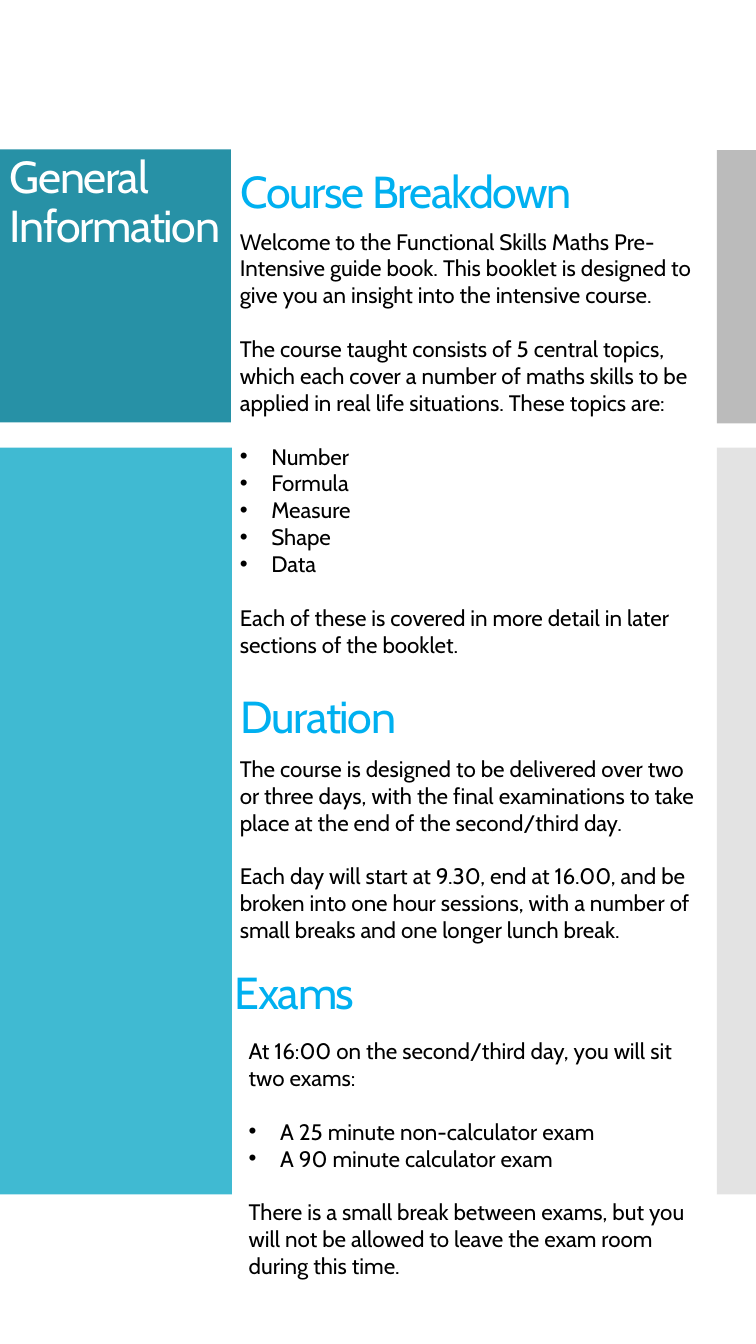
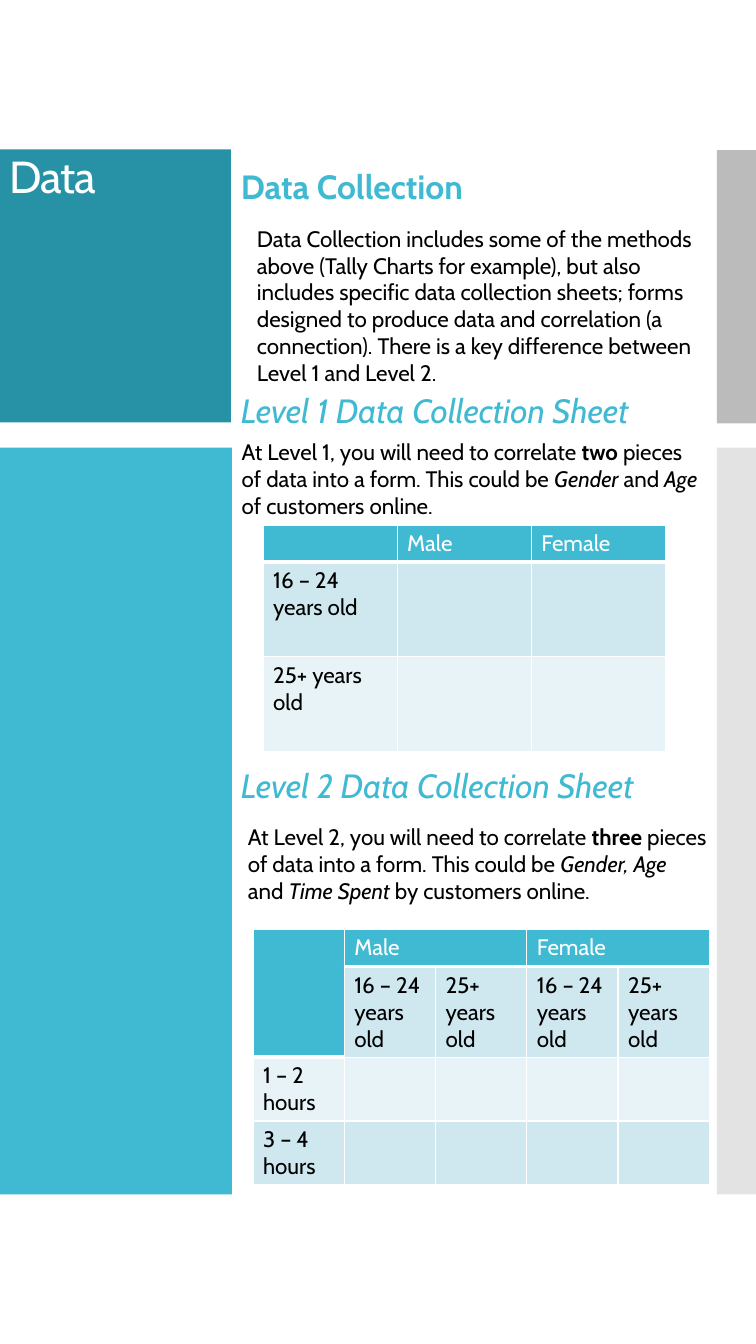
from dataclasses import dataclass

from lxml.etree import SubElement
from pptx import Presentation
from pptx.dml.color import RGBColor
from pptx.enum.shapes import MSO_SHAPE
from pptx.enum.text import MSO_ANCHOR, MSO_AUTO_SIZE
from pptx.oxml.ns import qn
from pptx.util import Pt


@dataclass(frozen=True)
class Style:
    size: int
    color: str
    bold: bool = False
    italic: bool = False
    tight: bool = False  # closer letters and lines
    grow: bool = False   # box height follows the text


class Theme:
    font = "Cabin"
    teal, dark_teal = "40BAD2", "2791A6"
    grey, pale_grey = "BBBBBB", "C8C8C8"
    row_tints = ("CFE7EE", "E8F3F7")
    white = "FFFFFF"
    title = Style(32, white, tight=True)
    heading = Style(32, "00B0F0", tight=True)
    topic = Style(24, teal, bold=True)
    subtopic = Style(24, teal, italic=True)
    body = Style(16, "000000", grow=True)
    table_head = Style(16, white)
    table_cell = Style(16, "000000")
    gap = 19.2     # one line of body text
    indent = 22.5  # bullet indent


def write(frame, paragraphs, style):
    """Each paragraph is (layout, runs); each run is (text, emphasis)."""
    for number, (layout, runs) in enumerate(paragraphs):
        para = frame.add_paragraph() if number else frame.paragraphs[0]
        if style.tight:
            para.line_spacing = 0.9
        if "gap" in layout:
            para.space_before = Pt(Theme.gap)
        if "bullet" in layout:
            properties = para._p.get_or_add_pPr()
            properties.set("marL", str(Pt(Theme.indent)))
            properties.set("indent", str(-Pt(Theme.indent)))
            SubElement(properties, qn("a:buFont"), typeface="Arial")
            SubElement(properties, qn("a:buChar"), char="•")
        for text, emphasis in runs:
            span = para.add_run()
            span.text = text
            span.font.name = Theme.font
            span.font.size = Pt(style.size)
            span.font.color.rgb = RGBColor.from_string(style.color)
            span.font.bold = style.bold or emphasis == "bold"
            span.font.italic = style.italic or emphasis == "italic"
            if style.tight:
                span.font._element.set("spc", "-100")
        if not runs:
            SubElement(para._p, qn("a:endParaRPr"), sz=str(style.size * 100))


def add_text(page, place, paragraphs, style):
    box = page.shapes.add_textbox(*map(Pt, place))
    frame = box.text_frame
    frame.word_wrap = True
    frame.vertical_anchor = MSO_ANCHOR.TOP
    write(frame, paragraphs, style)
    if style.grow:
        frame.auto_size = MSO_AUTO_SIZE.SHAPE_TO_FIT_TEXT


deck = Presentation()
deck.slide_width, deck.slide_height = Pt(540), Pt(960)

# Shared bands: left, top, width, height, colour, opacity in percent
bands = [
    (0, 106.6, 165, 195.1, Theme.dark_teal, 100),
    (512, 107.3, 28, 195.1, Theme.grey, 100),
    (0, 319.7, 165.6, 533.5, Theme.teal, 100),
    (512, 319.7, 28, 533.5, Theme.pale_grey, 50),
]

# Text blocks of each page: place, paragraphs, style
general_blocks = [
    ((164.9, 118.1, 300.2, 46.1), [("", [("Course Breakdown", "")])], Theme.heading),
    ((164.2, 159.1, 347, 317.5), [
        ("", [("Welcome to the Functional Skills Maths Pre-Intensive guide book. "
               "This booklet is designed to give you an insight into the "
               "intensive course.", "")]),
        ("gap", [("The course taught consists of 5 central topics, which each cover "
                  "a number of maths skills to be applied in real life situations. "
                  "These topics are:", "")]),
        ("gap bullet", [("Number", "")]),
        ("bullet", [("Formula", "")]),
        ("bullet", [("Measure", "")]),
        ("bullet", [("Shape", "")]),
        ("bullet", [("Data", "")]),
        ("gap", [("Each of these is covered in more detail in later sections of "
                  "the booklet.", "")]),
    ], Theme.body),
    ((164.9, 492.5, 300.2, 46.1), [("", [("Duration", "")])], Theme.heading),
    ((164.2, 535.7, 341.3, 143.3), [
        ("", [("The course is designed to be delivered over two or three days, with "
               "the final examinations to take place at the end of the second/third "
               "day.", "")]),
        ("gap", [("Each day will start at 9.30, end at 16.00, and be broken into one "
                  "hour sessions, with a number of small breaks and one longer lunch "
                  "break.", "")]),
    ], Theme.body),
    ((160.6, 689.8, 300.2, 46.1), [("", [("Exams", "")])], Theme.heading),
    ((170.6, 737.3, 340.6, 181.4), [
        ("", [("At 16:00 on the second/third day, you will sit two exams:", "")]),
        ("gap bullet", [("A 25 minute non-calculator exam", "")]),
        ("bullet", [("A 90 minute calculator exam", "")]),
        ("gap", [("There is a small break between exams, but you will not be allowed "
                  "to leave the exam room during this time.", "")]),
    ], Theme.body),
]
data_blocks = [
    ((164.9, 115.2, 346.3, 185), [("", [("Data Collection", "")])], Theme.topic),
    ((176.4, 157, 334.8, 123.8), [
        ("", [("Data Collection includes some of the methods above (Tally Charts for "
               "example), but also includes specific data collection sheets; forms "
               "designed to produce data and correlation (a connection). There is a "
               "key difference between Level 1 and Level 2.", "")]),
    ], Theme.body),
    ((164.9, 275, 346.3, 185),
     [("", [("Level 1 Data Collection Sheet", "")])], Theme.subtopic),
    ((164.9, 542.9, 346.3, 185),
     [("", [("Level 2 Data Collection Sheet", "")])], Theme.subtopic),
    ((165.6, 309.6, 345.6, 65.5), [
        ("", [("At Level 1, you will need to correlate ", ""), ("two", "bold"),
              (" pieces of data into a form. This could be ", ""),
              ("Gender ", "italic"), ("and ", ""), ("Age ", "italic"),
              ("of customers online.", "")]),
    ], Theme.body),
    ((170, 584.6, 342, 65.5), [
        ("", [("At Level 2, you will need to correlate ", ""), ("three", "bold"),
              (" pieces of data into a form. This could be ", ""),
              ("Gender, Age ", "italic"), ("and ", ""), ("Time Spent ", "italic"),
              ("by customers online.", "")]),
    ], Theme.body),
]

# Tables: left, top, column width, row heights, cell texts, merged ranges
young, older = "16 – 24 years old", "25+ years old"
data_tables = [
    (187.9, 375.1, 95.8, [26, 67.7, 67.7],
     [["", "Male", "Female"], [young, "", ""], [older, "", ""]],
     []),
    (180.7, 663.8, 65.2, [26.6, 59.8, 41.8, 41.8],
     [["", "Male", "", "Female", ""],
      ["", young, older, young, older],
      ["1 – 2 hours", "", "", "", ""],
      ["3 – 4 hours", "", "", "", ""]],
     [((0, 0), (1, 0)), ((0, 1), (0, 2)), ((0, 3), (0, 4))]),
]

for title, blocks, tables in [
    ("General Information", general_blocks, []),
    ("Data", data_blocks, data_tables),
]:
    page = deck.slides.add_slide(deck.slide_layouts[6])

    # Side bands
    for *place, color, opacity in bands:
        band = page.shapes.add_shape(MSO_SHAPE.RECTANGLE, *map(Pt, place))
        band.shadow.inherit = False
        band.line.fill.background()
        band.fill.solid()
        band.fill.fore_color.rgb = RGBColor.from_string(color)
        if opacity < 100:
            fill_color = band._element.spPr.find(".//" + qn("a:srgbClr"))
            SubElement(fill_color, qn("a:alpha"), val=str(opacity * 1000))

    # Title and text
    add_text(page, (0, 107.3, 165, 195.1), [("", [(title, "")])], Theme.title)
    for place, paragraphs, style in blocks:
        add_text(page, place, paragraphs, style)

    # Tables
    for left, top, column_width, heights, texts, merges in tables:
        columns = len(texts[0])
        table = page.shapes.add_table(
            len(texts), columns, Pt(left), Pt(top),
            Pt(column_width * columns), Pt(sum(heights))).table
        table.first_row = table.horz_banding = False
        for column in table.columns:
            column.width = Pt(column_width)
        for row, height in zip(table.rows, heights):
            row.height = Pt(height)
        for start, end in merges:
            table.cell(*start).merge(table.cell(*end))
        for row_number, row_texts in enumerate(texts):
            for column_number, text in enumerate(row_texts):
                cell = table.cell(row_number, column_number)
                is_head = row_number == 0
                style = Theme.table_head if is_head else Theme.table_cell
                write(cell.text_frame, [("", [(text, "")] if text else [])], style)
                properties = cell._tc.get_or_add_tcPr()
                for side in ("lnL", "lnR", "lnT", "lnB"):
                    width = 3 if is_head and side == "lnB" else 1
                    border = SubElement(properties, qn("a:" + side), w=str(Pt(width)))
                    border_fill = SubElement(border, qn("a:solidFill"))
                    SubElement(border_fill, qn("a:srgbClr"), val=Theme.white)
                tint = Theme.row_tints[(row_number - 1) % 2]
                cell.fill.solid()
                cell.fill.fore_color.rgb = RGBColor.from_string(
                    Theme.teal if is_head else tint)

deck.save("out.pptx")
